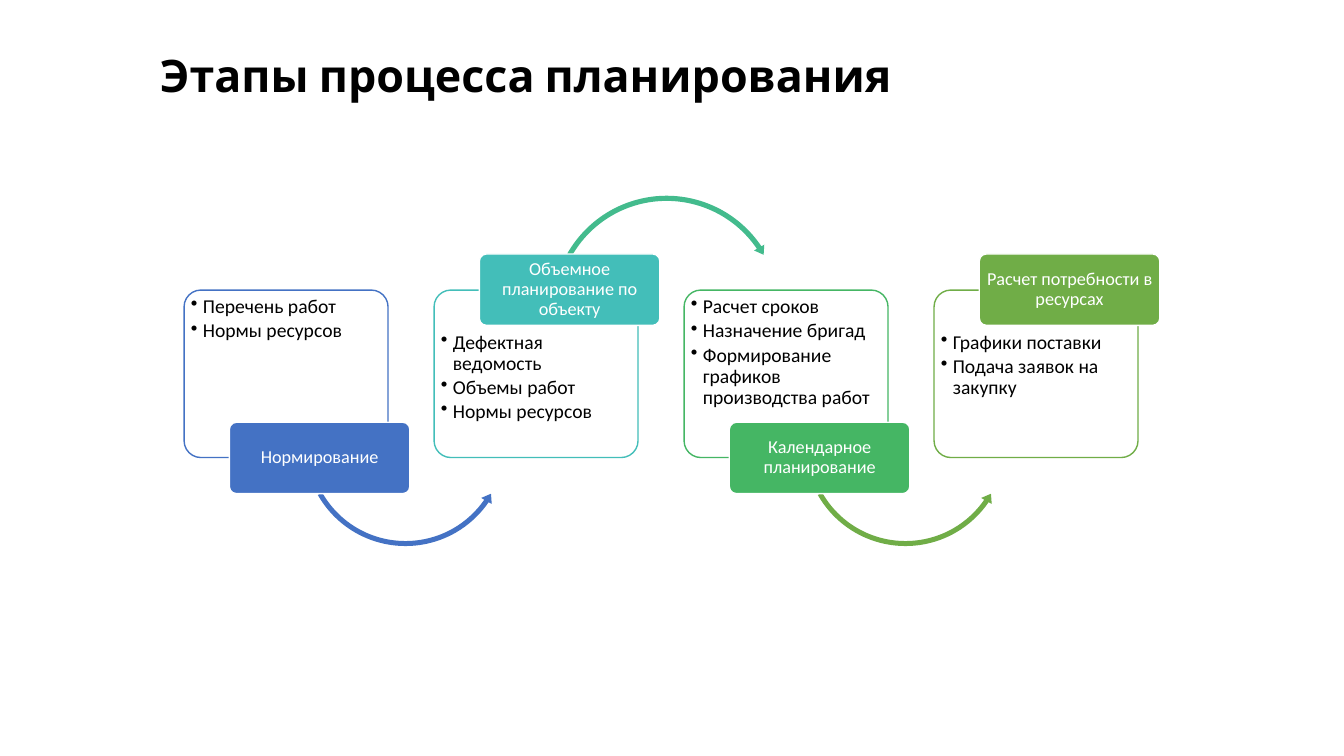
from dataclasses import dataclass
from typing import Optional

from lxml import etree
from pptx import Presentation
from pptx.dml.color import RGBColor
from pptx.enum.shapes import MSO_SHAPE
from pptx.enum.text import MSO_ANCHOR, PP_ALIGN
from pptx.oxml.ns import qn
from pptx.util import Cm, Pt

ROUNDED = MSO_SHAPE.ROUNDED_RECTANGLE
ARC_OVER = MSO_SHAPE.CIRCULAR_ARROW
ARC_UNDER = MSO_SHAPE.LEFT_CIRCULAR_ARROW
TOP, MIDDLE = MSO_ANCHOR.TOP, MSO_ANCHOR.MIDDLE
LEFT, CENTER = PP_ALIGN.LEFT, PP_ALIGN.CENTER

BLACK = RGBColor(0x00, 0x00, 0x00)
WHITE = RGBColor(0xFF, 0xFF, 0xFF)
BLUE = RGBColor(0x44, 0x72, 0xC4)
TEAL = RGBColor(0x43, 0xBE, 0xB9)
SEA_GREEN = RGBColor(0x43, 0xBB, 0x8D)
GREEN = RGBColor(0x45, 0xB6, 0x64)
OLIVE = RGBColor(0x70, 0xAD, 0x47)

TITLE_FONT, BODY_FONT = "Cabin", "Calibri"
LINE_SPACING = 0.9

# Lengths in centimetres
FIRST_LEFT, STAGE_PITCH = 4.64, 6.3
CARD_TOP, CARD_WIDTH, CARD_HEIGHT = 7.31, 5.14, 4.22
LABEL_SHIFT, LABEL_WIDTH, LABEL_HEIGHT = 1.14, 4.55, 1.8
LABEL_TOP_HIGH, LABEL_TOP_LOW = 6.4, 10.64
BULLET_INDENT = 0.3


@dataclass(frozen=True)
class Arc:
    """A curved arrow, placed relative to the left edge of its stage."""
    preset: MSO_SHAPE
    shift: float
    top: float
    size: float
    adjustments: tuple[float, ...]


@dataclass(frozen=True)
class Stage:
    name: str
    tasks: tuple[str, ...]
    color: RGBColor
    label_on_top: bool
    arc_color: Optional[RGBColor] = None


OVER = Arc(ARC_OVER, 2.9, 4.85, 5.92, (0.022, 2.618, 195.626, 125.755, 0.025))
UNDER = Arc(ARC_UNDER, 2.95, 8.59, 5.26, (0.024, 2.962, 20.717, 90.245, 0.029))

STAGES = (
    Stage("Нормирование", ("Перечень работ", "Нормы ресурсов"), BLUE, False, BLUE),
    Stage("Объемное планирование по объекту",
          ("Дефектная ведомость", "Объемы работ", "Нормы ресурсов"),
          TEAL, True, SEA_GREEN),
    Stage("Календарное планирование",
          ("Расчет сроков", "Назначение бригад",
           "Формирование графиков производства работ"),
          GREEN, False, OLIVE),
    Stage("Расчет потребности в ресурсах",
          ("Графики поставки", "Подача заявок на закупку"), OLIVE, True),
)


def add_filled(slide, preset, left: float, top: float, width: float, height: float,
               fill: RGBColor, line: Optional[RGBColor], adjustments: tuple[float, ...]):
    shape = slide.shapes.add_shape(preset, Cm(left), Cm(top), Cm(width), Cm(height))
    shape.shadow.inherit = False
    shape.fill.solid()
    shape.fill.fore_color.rgb = fill
    if line is None:
        shape.line.fill.background()
    else:
        shape.line.color.rgb = line
        shape.line.width = Pt(1)
    for index, value in enumerate(adjustments):
        shape.adjustments[index] = value
    return shape


def set_frame(shape, anchor, side: float, top: float, bottom: float):
    frame = shape.text_frame
    frame.word_wrap = True
    frame.vertical_anchor = anchor
    frame.margin_left = frame.margin_right = Cm(side)
    frame.margin_top, frame.margin_bottom = Cm(top), Cm(bottom)
    return frame


def write(paragraph, text: str, font: str, size: int, color: RGBColor,
          align=LEFT, bold: bool = False) -> None:
    paragraph.alignment = align
    paragraph.line_spacing = LINE_SPACING
    run = paragraph.add_run()
    run.text = text
    run.font.name, run.font.size, run.font.bold = font, Pt(size), bold
    run.font.color.rgb = color


def add_bullet(paragraph) -> None:
    properties = paragraph._p.get_or_add_pPr()
    properties.set("marL", str(Cm(BULLET_INDENT)))
    properties.set("indent", str(-Cm(BULLET_INDENT)))
    etree.SubElement(properties, qn("a:buChar")).set("char", "•")


def add_card(slide, stage: Stage, left: float) -> None:
    card = add_filled(slide, ROUNDED, left, CARD_TOP, CARD_WIDTH, CARD_HEIGHT,
                      WHITE, stage.color, (0.1,))
    fill_color = card._element.spPr.find(qn("a:solidFill")).find(qn("a:srgbClr"))
    etree.SubElement(fill_color, qn("a:alpha")).set("val", "90000")
    text_top = 0.94 if stage.label_on_top else 0.05
    frame = set_frame(card, TOP, 0.05, text_top, 0.05)
    for index, task in enumerate(stage.tasks):
        paragraph = frame.add_paragraph() if index else frame.paragraphs[0]
        add_bullet(paragraph)
        paragraph.space_after = Pt(2.1)
        write(paragraph, task, BODY_FONT, 14, BLACK)


def add_label(slide, stage: Stage, left: float) -> None:
    top = LABEL_TOP_HIGH if stage.label_on_top else LABEL_TOP_LOW
    label = add_filled(slide, ROUNDED, left + LABEL_SHIFT, top, LABEL_WIDTH,
                       LABEL_HEIGHT, stage.color, WHITE, (0.1,))
    frame = set_frame(label, MIDDLE, 0.07, 0.05, 0.05)
    write(frame.paragraphs[0], stage.name, BODY_FONT, 13, WHITE, CENTER)


def add_stage(slide, stage: Stage, left: float) -> None:
    add_card(slide, stage, left)
    if stage.arc_color is not None:
        arc = OVER if stage.label_on_top else UNDER
        add_filled(slide, arc.preset, left + arc.shift, arc.top, arc.size, arc.size,
                   stage.arc_color, None, arc.adjustments)
    add_label(slide, stage, left)


def add_title(slide, text: str) -> None:
    title = slide.shapes.add_textbox(Cm(3.78), Cm(1.17), Cm(27.25), Cm(1.6))
    frame = set_frame(title, MIDDLE, 0.25, 0.13, 0.13)
    write(frame.paragraphs[0], text, TITLE_FONT, 32, BLACK, bold=True)


def main() -> None:
    presentation = Presentation()
    presentation.slide_width, presentation.slide_height = Cm(33.87), Cm(19.05)
    slide = presentation.slides.add_slide(presentation.slide_layouts[6])
    for index, stage in enumerate(STAGES):
        add_stage(slide, stage, FIRST_LEFT + index * STAGE_PITCH)
    add_title(slide, "Этапы процесса планирования")
    presentation.save("out.pptx")


if __name__ == "__main__":
    main()
